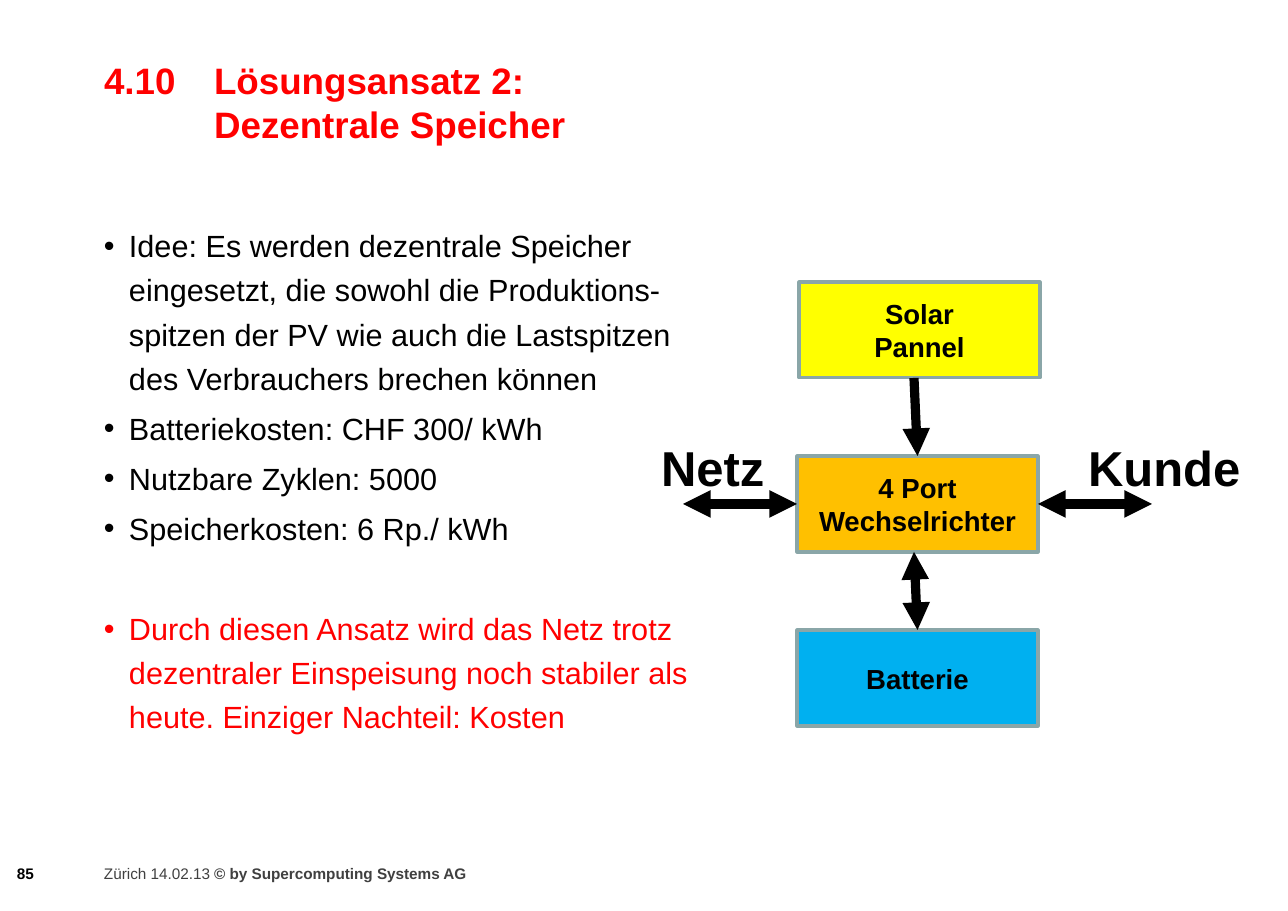
import pptx
import pptx.dml.color
import pptx.enum.shapes
import pptx.enum.text
import pptx.oxml.ns
import pptx.util
from lxml import etree

RGBColor = pptx.dml.color.RGBColor
SHAPE = pptx.enum.shapes.MSO_SHAPE
ALIGN = pptx.enum.text.PP_ALIGN
ANCHOR = pptx.enum.text.MSO_ANCHOR
qn = pptx.oxml.ns.qn

BLACK = RGBColor(0x00, 0x00, 0x00)
RED = RGBColor(0xFF, 0x00, 0x00)
GREY = RGBColor(0x40, 0x40, 0x40)
BORDER = RGBColor(0x8A, 0xA6, 0xA8)
YELLOW = RGBColor(0xFF, 0xFF, 0x00)
ORANGE = RGBColor(0xFF, 0xC0, 0x00)
BLUE = RGBColor(0x00, 0xB0, 0xF0)

PX = 8298  # EMU per pixel
TOP, LEFT, BOTTOM, RIGHT = range(4)


def px(length):
    return pptx.util.Emu(length * PX)


def write(para, text, size=20, color=BLACK, bold=False):
    """Add text to a paragraph as one formatted run."""
    span = para.add_run()
    span.text = text
    span.font.name = "Arial"
    span.font.size = pptx.util.Pt(size)
    span.font.bold = bold
    span.font.color.rgb = color


def set_frame(frame, inset_x=12, inset_y=7, anchor=ANCHOR.TOP):
    frame.word_wrap = True
    frame.auto_size = pptx.enum.text.MSO_AUTO_SIZE.NONE
    frame.vertical_anchor = anchor
    frame.margin_left = frame.margin_right = px(inset_x)
    frame.margin_top = frame.margin_bottom = px(inset_y)
    return frame


def add_text_box(page, left, top, width, height, **insets):
    box = page.shapes.add_textbox(px(left), px(top), px(width), px(height))
    return set_frame(box.text_frame, **insets)


def hang(para, indent, bullet=None):
    """Give a paragraph a hanging indent and, if wanted, a bullet."""
    props = para._p.get_or_add_pPr()
    props.set("marL", str(px(indent)))
    props.set("indent", str(-px(indent)))
    if bullet:
        font = etree.SubElement(props, qn("a:buFont"))
        font.set("typeface", "Arial")
        etree.SubElement(props, qn("a:buChar")).set("char", bullet)


def add_title(page, left, top, width, height):
    title = page.shapes.title
    title.left, title.top = px(left), px(top)
    title.width, title.height = px(width), px(height)
    para = set_frame(title.text_frame).paragraphs[0]
    para.alignment = ALIGN.LEFT
    hang(para, 110)
    style = {"size": 24, "color": RED, "bold": True}
    write(para, "4.10\tLösungsansatz 2:", **style)
    para.add_line_break()
    write(para, "Dezentrale Speicher", **style)


def add_arguments(page, left, top, width, height):
    frame = add_text_box(page, left, top, width, height)
    # Text, colour, space before in points
    arguments = [
        ("Idee: Es werden dezentrale Speicher eingesetzt, die sowohl die "
         "Produktions-spitzen der PV wie auch die Lastspitzen des "
         "Verbrauchers brechen können", BLACK, 0),
        ("Batteriekosten: CHF 300/ kWh", BLACK, 4),
        ("Nutzbare Zyklen: 5000", BLACK, 4),
        ("Speicherkosten: 6 Rp./ kWh", BLACK, 4),
        ("Durch diesen Ansatz wird das Netz trotz dezentraler Einspeisung "
         "noch stabiler als heute. Einziger Nachteil: Kosten", RED, 36.6),
    ]
    for index, (text, color, space) in enumerate(arguments):
        para = frame.add_paragraph() if index else frame.paragraphs[0]
        hang(para, 25, bullet="•")
        para.line_spacing = 1.2
        para.space_before = pptx.util.Pt(space)
        write(para, text, color=color)


def add_block(page, left, top, width, height, lines, fill):
    block = page.shapes.add_shape(
        SHAPE.RECTANGLE, px(left), px(top), px(width), px(height))
    block.shadow.inherit = False
    block.fill.solid()
    block.fill.fore_color.rgb = fill
    block.line.color.rgb = BORDER
    block.line.width = pptx.util.Pt(2)
    frame = set_frame(block.text_frame, 11, 6, ANCHOR.MIDDLE)
    for index, text in enumerate(lines):
        para = frame.add_paragraph() if index else frame.paragraphs[0]
        para.alignment = ALIGN.CENTER
        write(para, text, size=18, bold=True)
    return block


def add_arrow(page, start, end, ends, begin_at=None, end_at=None):
    """Draw an arrow; begin_at and end_at are (block, side) joints."""
    arrow = page.shapes.add_connector(
        pptx.enum.shapes.MSO_CONNECTOR.STRAIGHT, *map(px, start + end))
    arrow.line.color.rgb = BLACK
    arrow.line.width = pptx.util.Pt(6)
    for name in ends:
        etree.SubElement(arrow.line._ln, qn("a:" + name)).set("type", "triangle")
    etree.SubElement(arrow._element.spPr, qn("a:effectLst"))
    if begin_at:
        arrow.begin_connect(*begin_at)
    if end_at:
        arrow.end_connect(*end_at)


def add_diagram(page, left, top):
    width, height, pitch = 241, 96, 174
    block_left = left + 147
    contents = [
        (2, ["Solar", "Pannel"], YELLOW),
        (0, ["4 Port Wechselrichter"], ORANGE),
        (0, ["Batterie"], BLUE),
    ]
    solar, inverter, battery = [
        add_block(page, block_left + shift, top + row * pitch, width, height,
                  lines, fill)
        for row, (shift, lines, fill) in enumerate(contents)]

    # Vertical arrows between the blocks
    both = ("headEnd", "tailEnd")
    arrow_left = block_left + 117
    for row, (target, ends) in enumerate(
            [(inverter, ("tailEnd",)), (battery, both)]):
        start = (arrow_left, top + row * pitch + height)
        end = (arrow_left + 3, top + (row + 1) * pitch)
        add_arrow(page, start, end, ends, end_at=(target, TOP))

    # Horizontal arrows to the grid and the customer
    middle = top + pitch + height // 2
    block_right = block_left + width
    reach = 114
    add_arrow(page, (block_left - reach, middle), (block_left, middle), both,
              end_at=(inverter, LEFT))
    add_arrow(page, (block_right, middle), (block_right + reach, middle), both,
              begin_at=(inverter, RIGHT))
    for text, shift, label_width in [("Netz", 0, 130), ("Kunde", 427, 180)]:
        frame = add_text_box(page, left + shift, top + 150, label_width, 70,
                             inset_x=11, inset_y=6)
        write(frame.paragraphs[0], text, size=32, bold=True)


def add_footer(page, left, top, width, height):
    number = add_text_box(page, 0, top, 46, height).paragraphs[0]
    number.alignment = ALIGN.RIGHT
    write(number, "85", size=10, bold=True)
    credit = add_text_box(page, left, top, width, height).paragraphs[0]
    write(credit, "Zürich 14.02.13 ", size=10, color=GREY)
    write(credit, "© by Supercomputing Systems AG", size=10, color=GREY, bold=True)


def main():
    deck = pptx.Presentation()
    deck.slide_width, deck.slide_height = px(1288), px(911)
    page = deck.slides.add_slide(deck.slide_layouts.get_by_name("Title Only"))
    add_title(page, 92, 51, 1127, 110)
    add_arguments(page, 92, 213, 648, 602)
    add_diagram(page, 650, 282)
    add_footer(page, 92, 857, 684, 32)
    deck.save("out.pptx")


if __name__ == "__main__":
    main()
